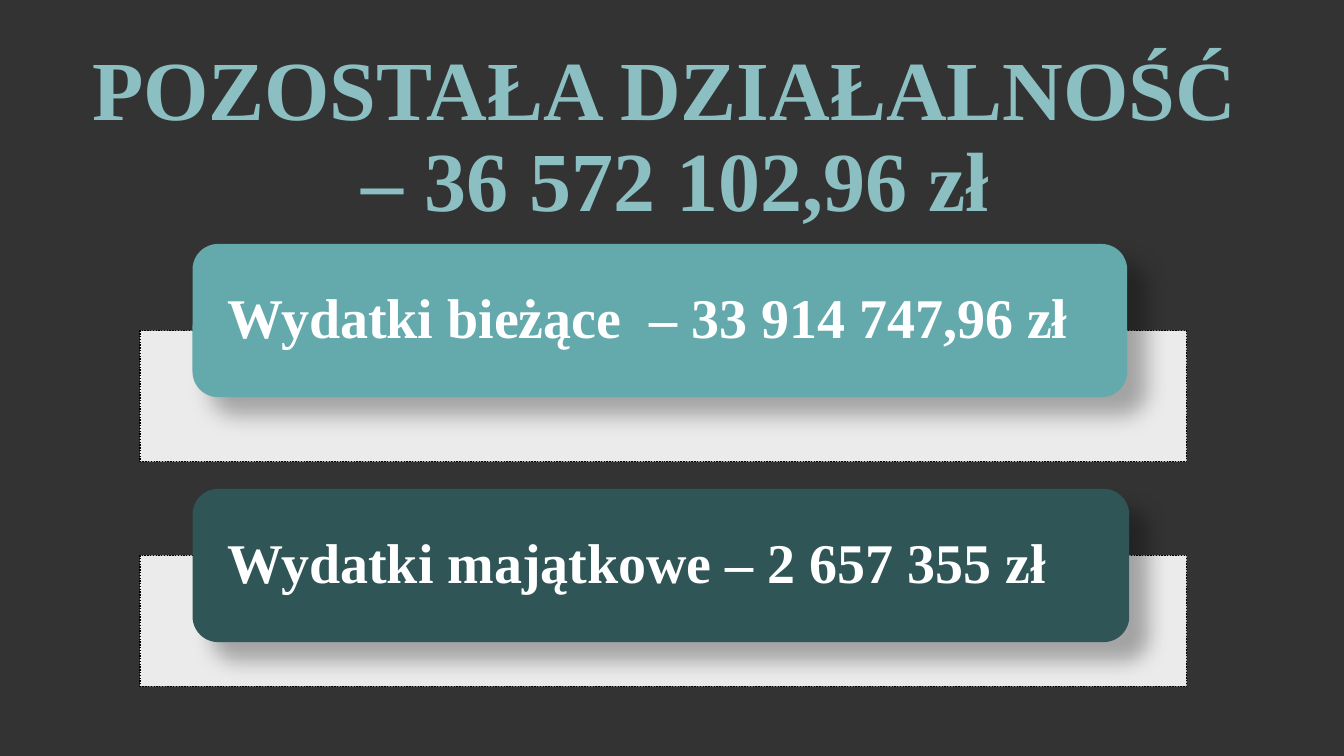
import pptx
import pptx.dml.color
import pptx.enum.dml
import pptx.enum.shapes
import pptx.enum.text
import pptx.oxml
import pptx.oxml.ns
import pptx.util
from pptx.util import Inches

SHAPES = pptx.enum.shapes.MSO_SHAPE
ANCHOR = pptx.enum.text.MSO_ANCHOR
ALIGN = pptx.enum.text.PP_ALIGN
NAMESPACE = pptx.oxml.ns.nsdecls("a")


def rgb(value):
    return pptx.dml.color.RGBColor.from_string(value)


def write(para, text, size, color):
    para.line_spacing = 0.9
    para.text = text
    for span in para.runs:
        for name, value in {"name": "Times New Roman", "size": pptx.util.Pt(size), "bold": True}.items():
            setattr(span.font, name, value)
        span.font.color.rgb = rgb(color)


deck = pptx.Presentation()
deck.slide_width, deck.slide_height = Inches(13.33), Inches(7.5)
page = deck.slides.add_slide(deck.slide_layouts[6])
page.background.fill.solid()
page.background.fill.fore_color.rgb = rgb("333333")

# Expense cards, each over a translucent panel
expenses = [
    ("Wydatki bieżące  – 33 914 747,96 zł", "64A9AC", 3.28, 2.42, 9.27),
    ("Wydatki majątkowe – 2 657 355 zł", "2F5557", 5.51, 4.85, 9.29),
]
for label, color, panel_top, card_top, card_width in expenses:
    panel = page.shapes.add_shape(
        SHAPES.RECTANGLE, Inches(1.39), Inches(panel_top), Inches(10.38), Inches(1.3))
    panel.shadow.inherit = False
    panel.fill.solid()
    panel.fill.fore_color.rgb = rgb("FFFFFF")
    panel_color = panel.fill._xPr.find(".//" + pptx.oxml.ns.qn("a:srgbClr"))
    panel_color.append(pptx.oxml.parse_xml(f'<a:alpha {NAMESPACE} val="90000"/>'))
    panel.line.color.rgb = rgb("000000")
    panel.line.width = pptx.util.Pt(1)
    panel.line.dash_style = pptx.enum.dml.MSO_LINE.ROUND_DOT

    card = page.shapes.add_shape(
        SHAPES.ROUNDED_RECTANGLE, Inches(1.91), Inches(card_top), Inches(card_width), Inches(1.52))
    card.fill.solid()
    card.fill.fore_color.rgb = rgb(color)
    card.line.fill.background()
    card.shadow.inherit = False
    effects = card._element.spPr.find(pptx.oxml.ns.qn("a:effectLst"))
    effects.append(pptx.oxml.parse_xml(
        f'<a:outerShdw {NAMESPACE} blurRad="{pptx.util.Pt(15)}" dist="{pptx.util.Pt(18)}" '
        'dir="2700000" algn="tl" rotWithShape="0">'
        '<a:srgbClr val="000000"><a:alpha val="30000"/></a:srgbClr></a:outerShdw>'))
    frame = card.text_frame
    frame_format = {
        "word_wrap": True, "vertical_anchor": ANCHOR.MIDDLE,
        "margin_left": Inches(0.27), "margin_right": Inches(0.27),
        "margin_top": 0, "margin_bottom": 0,
    }
    for name, value in frame_format.items():
        setattr(frame, name, value)
    para = frame.paragraphs[0]
    para.alignment = ALIGN.LEFT
    write(para, label, 40, "FFFFFF")

# Title
title = page.shapes.add_textbox(Inches(0.06), Inches(0.43), Inches(13.27), Inches(1.06))
title.text_frame.word_wrap = True
heading = title.text_frame.paragraphs[0]
heading.alignment = ALIGN.CENTER
heading.space_before = pptx.util.Pt(10)
write(heading, "POZOSTAŁA DZIAŁALNOŚĆ \v– 36 572 102,96 zł", 60, "8CBFC2")

deck.save("out.pptx")
